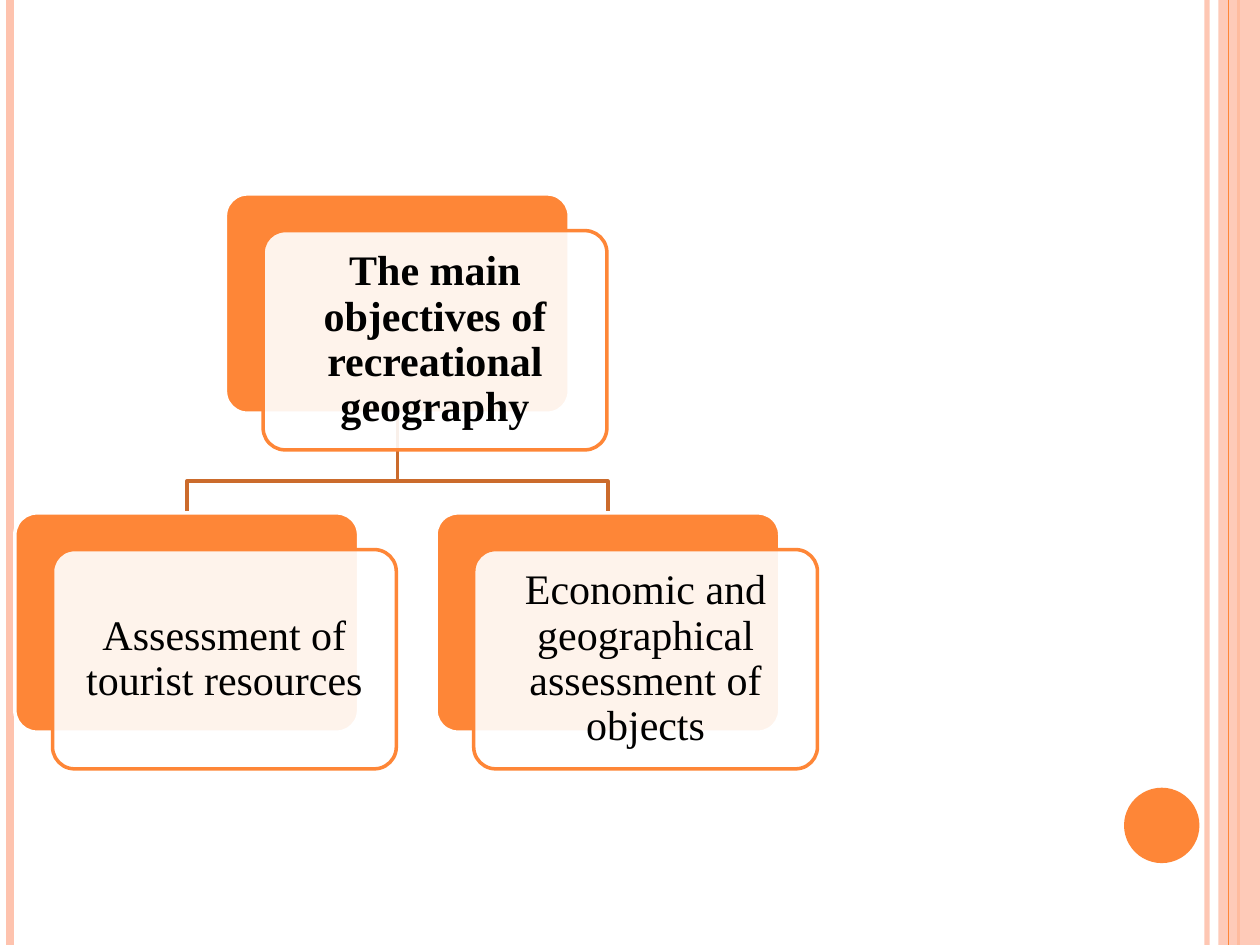
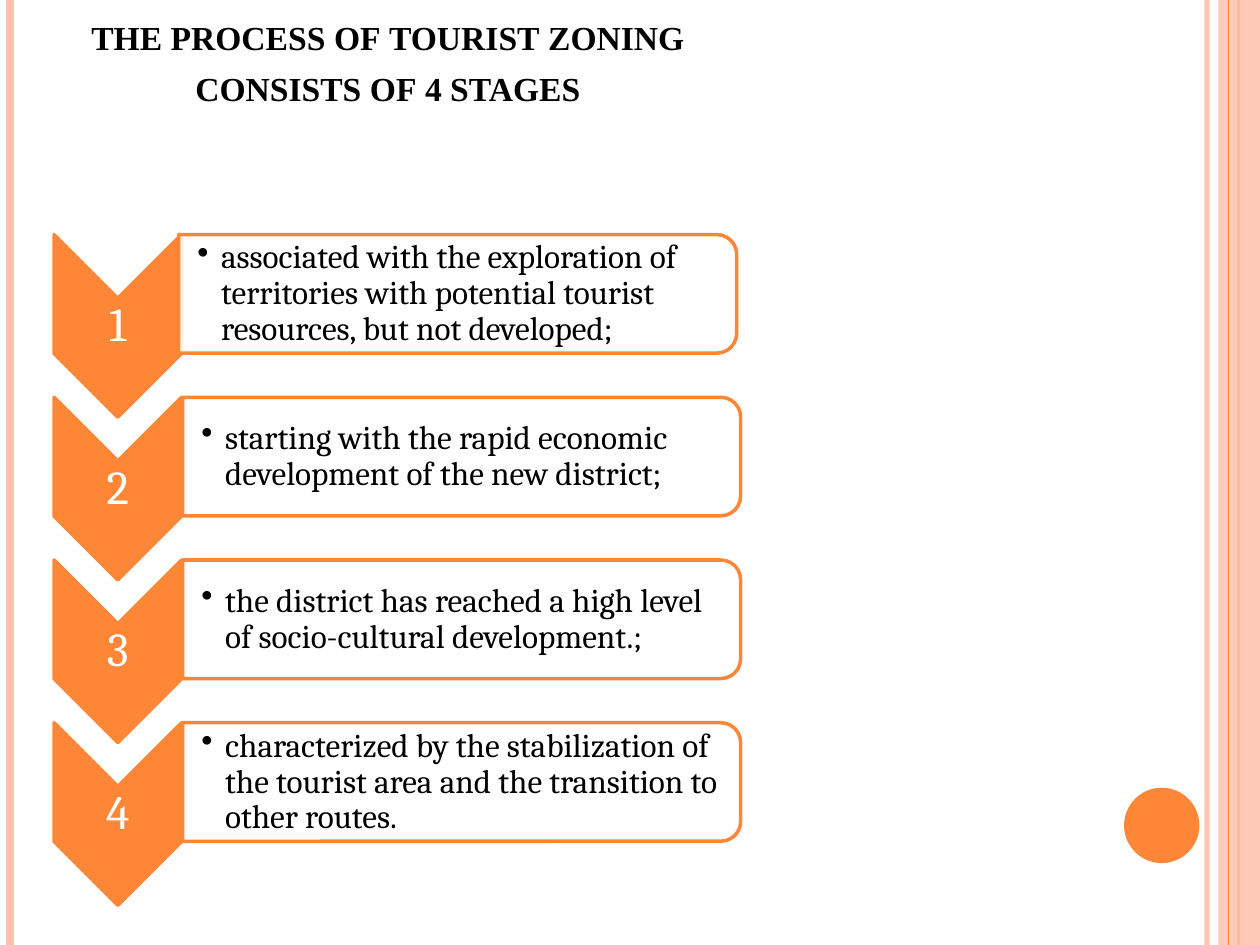
from lxml.etree import SubElement
from pptx import Presentation
from pptx.dml.color import RGBColor
from pptx.enum.shapes import MSO_CONNECTOR, MSO_SHAPE
from pptx.enum.text import MSO_ANCHOR, PP_ALIGN
from pptx.oxml.ns import qn
from pptx.util import Cm, Pt

WIDTH, HEIGHT = 25.4, 19.05
ORANGE, PEACH, BROWN = "FE8637", "FEC3AE", "CB6B2C"
WHITE, BLACK = "FFFFFF", "000000"
SERIF, BODY = "Times New Roman", "Cambria"

OBJECTIVES = "The main objectives of recreational geography"
TASKS = [
    "Assessment of tourist resources",
    "Economic and geographical assessment of objects",
]
TITLE = "the process of tourist zoning consists of 4 stages"
STAGES = [
    "associated with the exploration of territories with potential tourist resources, but not developed;",
    "starting with the rapid economic development of the new district;",
    "the district has reached a high level of socio-cultural development.;",
    "characterized by the stabilization of the tourist area and the transition to other routes.",
]

NODE_W, NODE_H = 6.93, 4.42
CARD_DX, CARD_DY = 0.76, 0.74
CHEVRON_W, CHEVRON_H = 2.57, 3.68
PANEL_W, PANEL_H = 11.25, 2.39


def paint(color_format, color, parent=None, alpha=None):
    color_format.rgb = RGBColor.from_string(color)
    if alpha is not None:
        srgb = next(parent.iter(qn("a:srgbClr")))
        SubElement(srgb, qn("a:alpha"), val=str(alpha * 1000))


def style_shape(sp, fill=None, line=None, alpha=None, weight=2):
    sp.shadow.inherit = False
    if fill:
        sp.fill.solid()
        paint(sp.fill.fore_color, fill, sp.fill._xPr, alpha)
    else:
        sp.fill.background()
    if line:
        paint(sp.line.color, line)
        sp.line.width = Pt(weight)
    else:
        sp.line.fill.background()
    return sp


def add_shape(s, kind, x, y, w, h, **style):
    sp = s.shapes.add_shape(kind, Cm(x), Cm(y), Cm(w), Cm(h))
    return style_shape(sp, **style)


def add_turned(s, kind, x, y, w, h, **style):
    sp = add_shape(s, kind, x + (w - h) / 2, y + (h - w) / 2, h, w, **style)
    sp.rotation = 90
    return sp


def add_text(s, x, y, w, h):
    return s.shapes.add_textbox(Cm(x), Cm(y), Cm(w), Cm(h))


def set_text(sp, text, size, font, color=BLACK, bold=False, anchor=MSO_ANCHOR.MIDDLE,
             align=PP_ALIGN.CENTER, spacing=0.9, insets=(0.25,) * 4):
    tf = sp.text_frame
    tf.text = text
    tf.word_wrap = True
    tf.vertical_anchor = anchor
    tf.margin_left, tf.margin_top, tf.margin_right, tf.margin_bottom = map(Cm, insets)
    p = tf.paragraphs[0]
    p.alignment = align
    p.line_spacing = spacing
    r = p.runs[0]
    r.font.size, r.font.name, r.font.bold = Pt(size), font, bold
    paint(r.font.color, color)
    return p


def add_rail(s, x, color, weight, alpha=None):
    line = s.shapes.add_connector(MSO_CONNECTOR.STRAIGHT, Cm(x), 0, Cm(x), Cm(HEIGHT))
    line.line.width = Pt(weight)
    paint(line.line.color, color, line._element.spPr, alpha)
    SubElement(line._element.spPr, qn("a:effectLst"))


def add_frame(s):
    add_rail(s, 24.33, PEACH, 3, 93)
    add_rail(s, 0.2, PEACH, 4.5)
    add_rail(s, 24.97, ORANGE, 1.5)
    add_shape(s, MSO_SHAPE.RECTANGLE, 24.56, 0, WIDTH - 24.56, HEIGHT, fill=PEACH, alpha=87)
    add_rail(s, 24.77, ORANGE, 0.75)
    add_shape(s, MSO_SHAPE.OVAL, 22.66, 15.88, 1.52, 1.52, fill=ORANGE)


def add_branch(s, x1, y1, x2, y2):
    bend = y2 - 0.64
    points = [(x1, bend), (x2, bend), (x2, y2)]
    fb = s.shapes.build_freeform(Cm(x1), Cm(y1))
    fb.add_line_segments([(Cm(x), Cm(y)) for x, y in points], close=False)
    style_shape(fb.convert_to_shape(), line=BROWN)


def add_node(s, x, y, text, bold=False):
    plate = add_shape(s, MSO_SHAPE.ROUNDED_RECTANGLE, x, y, NODE_W, NODE_H,
                      fill=ORANGE, line=WHITE)
    card = add_shape(s, MSO_SHAPE.ROUNDED_RECTANGLE, x + CARD_DX, y + CARD_DY, NODE_W, NODE_H,
                     fill=WHITE, line=ORANGE, alpha=90)
    for sp in (plate, card):
        sp.adjustments[0] = 0.1
    set_text(card, text, 24, SERIF, bold=bold)


def add_tree(s, x, y, root, leaves):
    step, drop = 8.49, 6.43
    root_x = x + step * (len(leaves) - 1) / 2
    leaf_xs = [x + i * step for i in range(len(leaves))]
    for leaf_x in reversed(leaf_xs):
        add_branch(s, root_x + NODE_W / 2, y + NODE_H, leaf_x + NODE_W / 2, y + drop)
    add_node(s, root_x, y, root, bold=True)
    for leaf_x, leaf in zip(leaf_xs, leaves):
        add_node(s, leaf_x, y + drop, leaf)


def add_title(s, x, y, w, h, text):
    p = set_text(add_text(s, x, y, w, h), text, 24, SERIF, bold=True, spacing=1.0,
                 anchor=MSO_ANCHOR.BOTTOM, insets=(0.25, 0.13, 0.25, 0.13))
    p.runs[0].font._element.set("cap", "small")


def add_bullet(p, indent):
    pPr = p._p.get_or_add_pPr()
    pPr.set("marL", str(Cm(indent)))
    pPr.set("indent", str(-Cm(indent)))
    SubElement(pPr, qn("a:buChar"), char="•")


def add_stage(s, x, y, number, text, panel_dx):
    add_turned(s, MSO_SHAPE.CHEVRON, x, y, CHEVRON_W, CHEVRON_H, fill=ORANGE, line=ORANGE)
    set_text(add_text(s, x, y + 1.3, CHEVRON_W, 1.09), str(number), 27, BODY, WHITE,
             insets=(0.05,) * 4)
    panel_x = x + panel_dx
    add_turned(s, MSO_SHAPE.ROUND_2_SAME_RECTANGLE, panel_x, y, PANEL_W, PANEL_H,
               fill=WHITE, line=ORANGE, alpha=90)
    p = set_text(add_text(s, panel_x, y + 0.12, PANEL_W - 0.12, PANEL_H - 0.23), text, 19, BODY,
                 align=PP_ALIGN.LEFT, insets=(0.38, 0.03, 0.03, 0.03))
    add_bullet(p, 0.48)


def add_stages(s, x, y, stages):
    for i, text in enumerate(stages):
        add_stage(s, x, y + i * 3.28, i + 1, text, 2.59 if i else 2.51)


def new_slide(prs):
    s = prs.slides.add_slide(prs.slide_layouts[6])
    add_frame(s)
    return s


def main():
    prs = Presentation()
    prs.slide_width, prs.slide_height = Cm(WIDTH), Cm(HEIGHT)
    add_tree(new_slide(prs), 0.3, 3.91, OBJECTIVES, TASKS)
    s = new_slide(prs)
    add_title(s, 0.71, 0.33, 14.22, 2.01, TITLE)
    add_stages(s, 1.09, 4.73, STAGES)
    prs.save("out.pptx")


if __name__ == "__main__":
    main()
